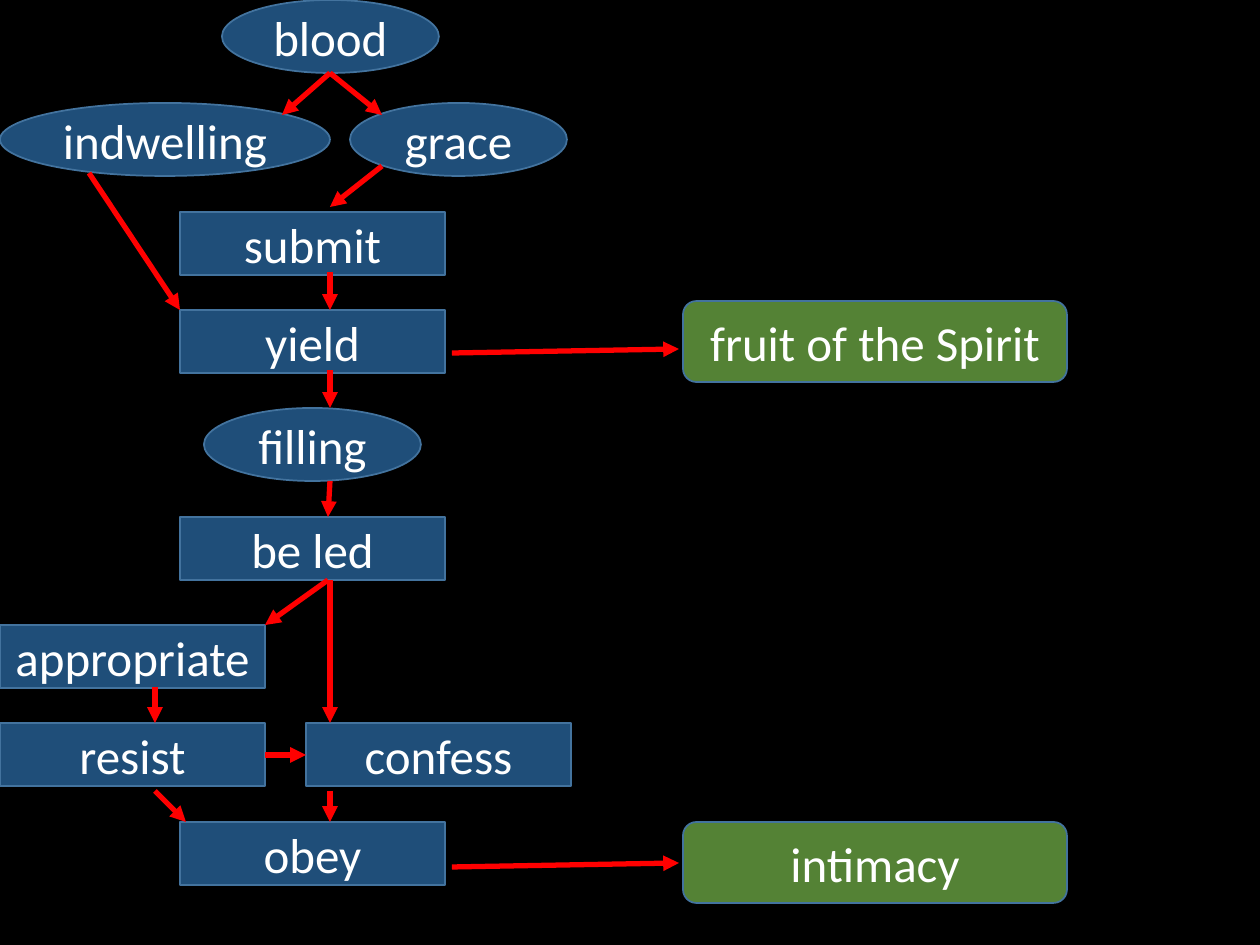
from dataclasses import dataclass

from lxml.etree import SubElement
from pptx import Presentation
from pptx.dml.color import RGBColor as RGB
from pptx.enum.shapes import MSO_CONNECTOR as LINK, MSO_SHAPE as SHAPE
from pptx.enum.text import MSO_ANCHOR as ANCHOR, PP_ALIGN as ALIGN
from pptx.oxml.ns import qn
from pptx.util import Pt

EMU_PER_PX = 914400 / 126


@dataclass(frozen=True)
class Theme:
    background: RGB = RGB.from_string("000000")
    step: RGB = RGB.from_string("1F4E79")
    result: RGB = RGB.from_string("548235")
    outline: RGB = RGB.from_string("43739E")
    arrow: RGB = RGB.from_string("FF0000")
    text: RGB = RGB.from_string("FFFFFF")
    font: str = "Calibri"
    size: Pt = Pt(28)
    outline_width: Pt = Pt(1)
    arrow_width: Pt = Pt(3)


THEME = Theme()
SPINE = 330
RESIST_AXIS = 155

GIFTS = [
    ("blood", 222, 0, 217),
    ("indwelling", 0, 103, 330),
    ("grace", 350, 103, 217),
    ("filling", 204, 408, 217),
]
RESPONSES = [
    ("submit", 180, 212),
    ("yield", 180, 310),
    ("be led", 180, 517),
    ("appropriate", 0, 625),
    ("resist", 0, 723),
    ("confess", 306, 723),
    ("obey", 180, 822),
]
RESULTS = [("fruit of the Spirit", 301), ("intimacy", 822)]
ARROWS = [
    (SPINE, 73, 282, 115),
    (SPINE, 73, 382, 115),
    (382, 166, SPINE, 207),
    (SPINE, 272, SPINE, 310),
    (89, 173, 180, 310),
    (SPINE, 370, SPINE, 408),
    (SPINE, 481, 328, 517),
    (SPINE, 580, SPINE, 723),
    (328, 580, 265, 625),
    (RESIST_AXIS, 687, RESIST_AXIS, 723),
    (265, 755, 306, 755),
    (SPINE, 791, SPINE, 822),
    (RESIST_AXIS, 791, 186, 822),
    (452, 353, 679, 349),
    (452, 867, 679, 863),
]


def px(length):
    return round(length * EMU_PER_PX)


def add_node(slide, kind, label, left, top, width, height, fill):
    node = slide.shapes.add_shape(kind, px(left), px(top), px(width), px(height))
    node.shadow.inherit = False
    node.fill.solid()
    node.fill.fore_color.rgb = fill
    node.line.color.rgb = THEME.outline
    node.line.width = THEME.outline_width
    frame = node.text_frame
    frame.word_wrap = True
    frame.vertical_anchor = ANCHOR.MIDDLE
    caption = frame.paragraphs[0]
    caption.text = label
    caption.alignment = ALIGN.CENTER
    caption.font.name = THEME.font
    caption.font.size = THEME.size
    caption.font.color.rgb = THEME.text


def add_arrow(slide, *ends):
    arrow = slide.shapes.add_connector(LINK.STRAIGHT, *map(px, ends))
    arrow.line.color.rgb = THEME.arrow
    arrow.line.width = THEME.arrow_width
    SubElement(arrow.line._get_or_add_ln(), qn("a:tailEnd"), type="triangle")
    SubElement(arrow._element.spPr, qn("a:effectLst"))


def main():
    deck = Presentation()
    deck.slide_width, deck.slide_height = px(1260), px(945)
    slide = deck.slides.add_slide(deck.slide_layouts[6])
    slide.background.fill.solid()
    slide.background.fill.fore_color.rgb = THEME.background

    for label, left, top, width in GIFTS:
        add_node(slide, SHAPE.OVAL, label, left, top, width, 73, THEME.step)
    for label, left, top in RESPONSES:
        add_node(slide, SHAPE.RECTANGLE, label, left, top, 265, 63, THEME.step)
    for label, top in RESULTS:
        add_node(slide, SHAPE.ROUNDED_RECTANGLE, label, 683, top, 384, 81, THEME.result)
    for ends in ARROWS:
        add_arrow(slide, *ends)

    deck.save("out.pptx")


if __name__ == "__main__":
    main()
